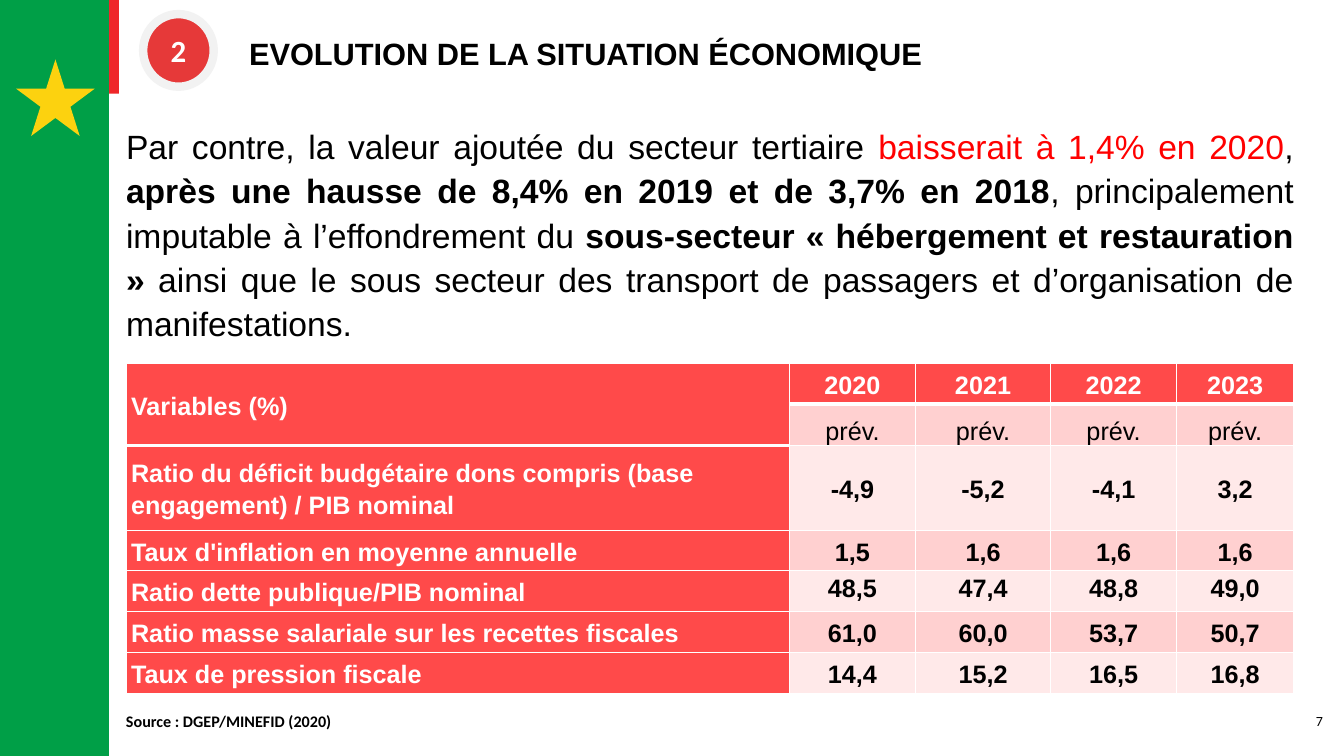
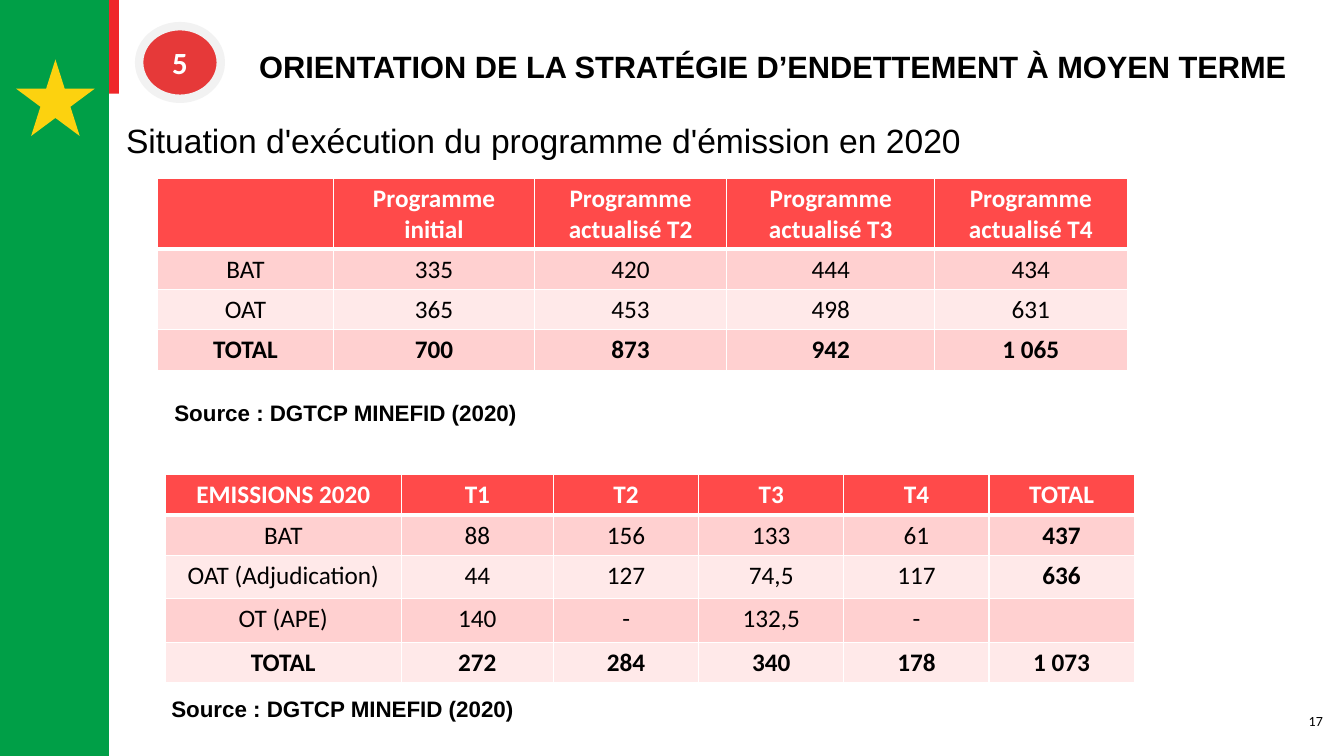
from dataclasses import dataclass

import lxml.etree
import pptx
import pptx.dml.color
import pptx.enum.shapes
import pptx.enum.text
import pptx.oxml.ns
import pptx.presentation
import pptx.shapes.base
import pptx.slide
import pptx.table
import pptx.text.text
import pptx.util

Inches = pptx.util.Inches
Pt = pptx.util.Pt
Align = pptx.enum.text.PP_ALIGN
Anchor = pptx.enum.text.MSO_ANCHOR
Kind = pptx.enum.shapes.MSO_SHAPE
qn = pptx.oxml.ns.qn
Box = tuple[float, float, float, float]


@dataclass(frozen=True)
class Theme:
    green: str = "009F47"
    red: str = "EF2729"
    gold: str = "FCD20F"
    badge: str = "E63939"
    ring: str = "F2F2F2"
    head: str = "FF4A4A"
    odd: str = "FFD0D0"
    even: str = "FFE9E9"
    alert: str = "FF0000"
    black: str = "000000"
    white: str = "FFFFFF"
    sans: str = "Arial"
    plain: str = "Calibri"
    title: float = 22
    body: float = 24
    cell: float = 18
    source: float = 16
    small: float = 11.5
    page: float = 10


THEME = Theme()


@dataclass(frozen=True)
class Font:
    size: float
    face: str = THEME.sans
    color: str = THEME.black
    bold: bool = False


@dataclass(frozen=True)
class Span:
    text: str
    color: str = THEME.black
    bold: bool = False


@dataclass(frozen=True)
class Row:
    cells: tuple[str, ...]
    height: float = 0.4
    bold: bool = False
    anchor: Anchor = Anchor.TOP


@dataclass(frozen=True)
class Grid:
    left: float
    top: float
    cols: tuple[float, ...]
    rows: tuple[Row, ...]
    face: str = THEME.plain
    inset: Box = (0.1, 0.05, 0.1, 0.05)
    line: float = 1
    side: bool = False
    total: bool = False


@dataclass(frozen=True)
class Note:
    text: str
    box: Box
    font: Font


@dataclass(frozen=True)
class Page:
    title: str
    title_box: Box
    mark: str
    mark_box: Box
    number: str
    body: tuple[Span, ...]
    body_box: Box
    grids: tuple[Grid, ...]
    notes: tuple[Note, ...]


def rgb(color: str) -> pptx.dml.color.RGBColor:
    return pptx.dml.color.RGBColor.from_string(color)


def lay(box: Box) -> list[pptx.util.Length]:
    return [Inches(side) for side in box]


def style(run: pptx.text.text._Run, font: Font) -> None:
    run.font.size = Pt(font.size)
    run.font.name = font.face
    run.font.bold = font.bold
    run.font.color.rgb = rgb(font.color)


def pad(holder: pptx.text.text.TextFrame | pptx.table._Cell, inset: Box) -> None:
    (holder.margin_left, holder.margin_top,
     holder.margin_right, holder.margin_bottom) = lay(inset)


def write(frame: pptx.text.text.TextFrame, text: str, font: Font,
          align: Align = Align.LEFT, line: float = 1) -> None:
    frame.text = text
    para = frame.paragraphs[0]
    para.alignment = align
    para.line_spacing = line
    for run in para.runs:
        style(run, font)


def add_text(slide: pptx.slide.Slide, box: Box,
             inset: Box = (0, 0, 0, 0)) -> pptx.text.text.TextFrame:
    frame = slide.shapes.add_textbox(*lay(box)).text_frame
    frame.word_wrap = True
    pad(frame, inset)
    return frame


def add_form(slide: pptx.slide.Slide, kind: Kind, box: Box,
             fill: str) -> pptx.shapes.base.BaseShape:
    form = slide.shapes.add_shape(kind, *lay(box))
    form.shadow.inherit = False
    form.fill.solid()
    form.fill.fore_color.rgb = rgb(fill)
    form.line.fill.background()
    return form


def add_bands(slide: pptx.slide.Slide) -> None:
    add_form(slide, Kind.RECTANGLE, (1.02, 0, 0.16, 0.93), THEME.red)
    add_form(slide, Kind.RECTANGLE, (0, 0, 1.08, 7.5), THEME.green)
    add_form(slide, Kind.STAR_5_POINT, (0.16, 0.59, 0.78, 0.76), THEME.gold)


def add_title(slide: pptx.slide.Slide, page: Page) -> None:
    title = slide.shapes.title
    title.left, title.top, title.width, title.height = lay(page.title_box)
    frame = title.text_frame
    frame.auto_size = pptx.enum.text.MSO_AUTO_SIZE.NONE
    frame.vertical_anchor = Anchor.MIDDLE
    pad(frame, (0.1, 0.12, 0.1, 0.05))
    write(frame, page.title, Font(THEME.title, bold=True))

    badge = add_form(slide, Kind.OVAL, page.mark_box, THEME.badge)
    badge.line.color.rgb = rgb(THEME.ring)
    badge.line.width = Pt(6)
    badge.text_frame.vertical_anchor = Anchor.MIDDLE
    pad(badge.text_frame, (0, 0, 0, 0))
    write(badge.text_frame, page.mark,
          Font(THEME.title, THEME.plain, THEME.white, True), Align.CENTER)


def add_body(slide: pptx.slide.Slide, page: Page) -> None:
    para = add_text(slide, page.body_box).paragraphs[0]
    para.alignment = Align.JUSTIFY
    para.line_spacing = 1.1
    para.space_after = Pt(6)
    for span in page.body:
        run = para.add_run()
        run.text = span.text
        style(run, Font(THEME.body, color=span.color, bold=span.bold))


def edge(cell: pptx.table._Cell, top: float, bottom: float) -> None:
    props = cell._tc.get_or_add_tcPr()
    widths = {"a:lnL": 1, "a:lnR": 1, "a:lnT": top, "a:lnB": bottom}
    for place, (tag, width) in enumerate(widths.items()):
        line = lxml.etree.SubElement(props, qn(tag), w=str(Pt(width)))
        fill = lxml.etree.SubElement(line, qn("a:solidFill"))
        lxml.etree.SubElement(fill, qn("a:srgbClr"), val=THEME.white)
        props.insert(place, line)


def add_grid(slide: pptx.slide.Slide, grid: Grid) -> None:
    box = (grid.left, grid.top, sum(grid.cols), sum(row.height for row in grid.rows))
    table = slide.shapes.add_table(len(grid.rows), len(grid.cols), *lay(box)).table
    for col, width in zip(table.columns, grid.cols):
        col.width = Inches(width)
    for r, row in enumerate(grid.rows):
        table.rows[r].height = Inches(row.height)
        for c, text in enumerate(row.cells):
            cell = table.cell(r, c)
            label = grid.side and c == 0
            head = r == 0 or label
            last = 1 if label else 0
            total = grid.total and c == len(grid.cols) - 1
            band = THEME.odd if r % 2 else THEME.even
            cell.fill.solid()
            cell.fill.fore_color.rgb = rgb(THEME.head if head else band)
            cell.vertical_anchor = Anchor.MIDDLE if label else row.anchor
            pad(cell, grid.inset)
            font = Font(THEME.cell, grid.face, THEME.white if head else THEME.black,
                        head or row.bold or total)
            write(cell.text_frame, text, font,
                  Align.LEFT if label else Align.CENTER, grid.line)
            edge(cell, 3 if r == last + 1 else 1, 3 if r == last else 1)
    if grid.side:
        table.cell(0, 0).merge(table.cell(1, 0))


def add_page(deck: pptx.presentation.Presentation, page: Page) -> None:
    slide = deck.slides.add_slide(deck.slide_layouts[5])
    add_bands(slide)
    add_title(slide, page)
    add_body(slide, page)
    for grid in page.grids:
        add_grid(slide, grid)
    for note in page.notes:
        write(add_text(slide, note.box, (0, 0, 0.1, 0)), note.text, note.font)
    foot = add_text(slide, (9.81, 6.95, 3.31, 0.4))
    foot.vertical_anchor = Anchor.MIDDLE
    write(foot, page.number, Font(THEME.page, THEME.plain), Align.RIGHT)


MID = Anchor.MIDDLE
RATIOS = Grid(1.25, 3.61, (6.58, 1.25, 1.34, 1.25, 1.16), (
    Row(("Variables (%)", "2020", "2021", "2022", "2023"), 0.4, True, MID),
    Row(("", "prév.", "prév.", "prév.", "prév."), 0.41, False, Anchor.BOTTOM),
    Row(("Ratio du déficit budgétaire dons compris (base engagement) / PIB nominal",
         "-4,9", "-5,2", "-4,1", "3,2"), 0.84, True, MID),
    Row(("Taux d'inflation en moyenne annuelle", "1,5", "1,6", "1,6", "1,6"),
        0.4, True, MID),
    Row(("Ratio dette publique/PIB nominal", "48,5", "47,4", "48,8", "49,0"),
        0.41, True),
    Row(("Ratio masse salariale sur les recettes fiscales",
         "61,0", "60,0", "53,7", "50,7"), 0.4, True, MID),
    Row(("Taux de pression fiscale", "14,4", "15,2", "16,5", "16,8"),
        0.41, True, MID),
), THEME.sans, (0.05, 0, 0.05, 0), 1.15, side=True)

PLANS = Grid(1.56, 1.77, (1.75, 1.99, 1.91, 2.06, 1.91), (
    Row(("", "Programme initial", "Programme actualisé T2",
         "Programme actualisé T3", "Programme actualisé T4"), 0.7),
    Row(("BAT", "335", "420", "444", "434")),
    Row(("OAT", "365", "453", "498", "631")),
    Row(("TOTAL", "700", "873", "942", "1 065"), bold=True),
))

ISSUES = Grid(1.64, 4.71, (2.34, 1.51, 1.44, 1.44, 1.44, 1.44), (
    Row(("EMISSIONS 2020", "T1", "T2", "T3", "T4", "TOTAL")),
    Row(("BAT", "88", "156", "133", "61", "437")),
    Row(("OAT (Adjudication)", "44", "127", "74,5", "117", "636"), 0.43),
    Row(("OT (APE)", "140", "-", "132,5", "-", ""), 0.43),
    Row(("TOTAL", "272", "284", "340", "178", "1 073"), bold=True),
), total=True)

SOURCE = "Source : DGTCP MINEFID (2020)"
SOURCE_FONT = Font(THEME.source, bold=True)

PAGES = (
    Page("EVOLUTION DE LA SITUATION ÉCONOMIQUE", (2.37, 0.13, 9.09, 0.72),
         "2", (1.42, 0.14, 0.7, 0.72), "7", (
             Span("Par contre, la valeur ajoutée du secteur tertiaire "),
             Span("baisserait à 1,4% en 2020", THEME.alert),
             Span(", "),
             Span("après une hausse de 8,4% en 2019 et de 3,7% en 2018", bold=True),
             Span(", principalement imputable à l’effondrement du "),
             Span("sous-secteur « hébergement et restauration »", bold=True),
             Span(" ainsi que le sous secteur des transport de passagers "
                  "et d’organisation de manifestations."),
         ), (1.25, 1.21, 11.58, 2.33), (RATIOS,),
         (Note("Source : DGEP/MINEFID (2020)", (1.25, 7.06, 4.23, 0.27),
               Font(THEME.small, THEME.plain, bold=True)),)),
    Page("ORIENTATION DE LA STRATÉGIE D’ENDETTEMENT À MOYEN TERME",
         (2.47, 0.26, 10.49, 0.72), "5", (1.38, 0.26, 0.81, 0.72), "17",
         (Span("Situation d'exécution du programme d'émission en 2020"),),
         (1.25, 1.15, 11.58, 0.58), (PLANS, ISSUES),
         (Note(SOURCE, (1.73, 3.96, 3.64, 0.36), SOURCE_FONT),
          Note(SOURCE, (1.7, 6.9, 3.64, 0.36), SOURCE_FONT))),
)


def main() -> None:
    deck = pptx.Presentation()
    deck.slide_width, deck.slide_height = Inches(13.33), Inches(7.5)
    for page in PAGES:
        add_page(deck, page)
    deck.save("out.pptx")


if __name__ == "__main__":
    main()
